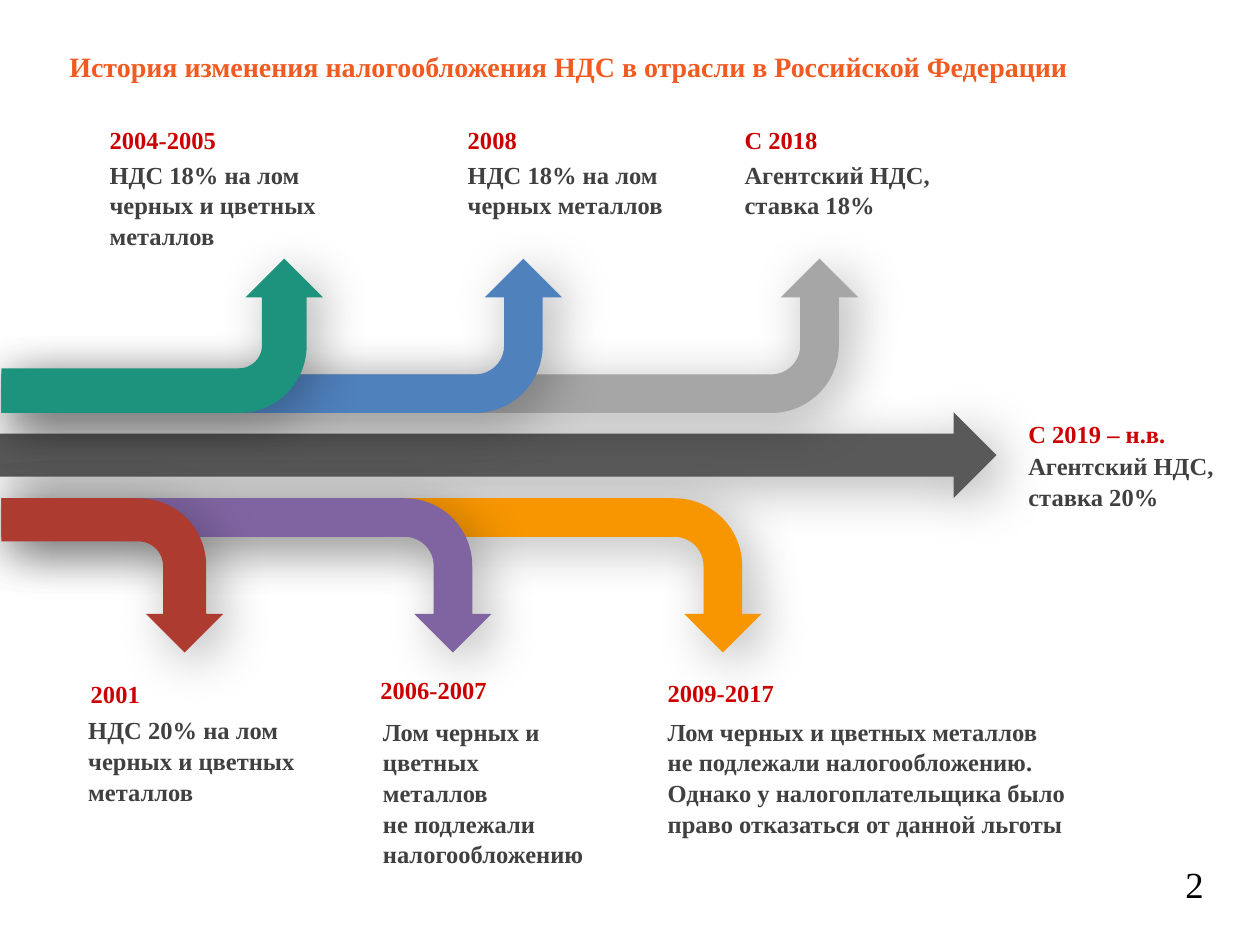
from lxml import etree
from pptx import Presentation
from pptx.dml.color import RGBColor
from pptx.enum import shapes, text
from pptx.oxml.ns import qn
from pptx.util import Cm, Pt

COLORS = {
    "title": "F15A21", "year": "CC0000", "body": "404040", "number": "000000",
    "axis": "595959", "gray": "A6A6A6", "orange": "F79600", "blue": "4F81BD",
    "green": "1D927D", "purple": "8064A2", "red": "AE3B2F",
}


class TimelineSlide:
    font_name = "Times New Roman"
    bend_depth = 3.11

    def __init__(self, slide):
        self.slide = slide

    def format(self, frame, size, color, bold=True, align=text.PP_ALIGN.LEFT, spacing=1.04):
        frame.margin_left = frame.margin_right = Cm(0.18)
        frame.margin_top = frame.margin_bottom = Cm(0.1)
        for paragraph in frame.paragraphs:
            paragraph.alignment = align
            paragraph.line_spacing = spacing
            font = paragraph.font
            font.name, font.size, font.bold = self.font_name, Pt(size), bold
            font.color.rgb = RGBColor.from_string(COLORS[color])

    def title(self, words, left, top, width, height):
        title = self.slide.shapes.title
        title.left, title.top, title.width, title.height = map(Cm, (left, top, width, height))
        title.text_frame.text = words
        title.text_frame.word_wrap = False
        title.text_frame.vertical_anchor = text.MSO_ANCHOR.MIDDLE
        self.format(title.text_frame, 16, "title", spacing=1.0)
        title.text_frame.margin_left = Cm(0.23)

    def label(self, words, left, top, width, height, size=14, color="body", **style):
        box = self.slide.shapes.add_textbox(Cm(left), Cm(top), Cm(width), Cm(height))
        frame = box.text_frame
        frame.word_wrap = True
        frame.auto_size = text.MSO_AUTO_SIZE.SHAPE_TO_FIT_TEXT
        frame.text = words
        self.format(frame, size, color, **style)

    def shadow(self, shape):
        effects = etree.SubElement(shape._element.spPr, qn("a:effectLst"))
        outer = etree.SubElement(effects, qn("a:outerShdw"), blurRad=str(Pt(30)),
                                 dist=str(Pt(8)), dir=str(45 * 60000), rotWithShape="0")
        black = etree.SubElement(outer, qn("a:srgbClr"), val="000000")
        etree.SubElement(black, qn("a:alpha"), val="30000")

    def arrow(self, kind, color, left, top, width, height):
        arrow = self.slide.shapes.add_shape(kind, Cm(left), Cm(top), Cm(width), Cm(height))
        arrow.fill.solid()
        arrow.fill.fore_color.rgb = RGBColor.from_string(COLORS[color])
        arrow.line.fill.background()
        self.shadow(arrow)
        return arrow

    def bent_arrow(self, color, length, upward, stem=None):
        """Arrow from the left edge that turns up or down at its far end."""
        depth = self.bend_depth
        middle = 6.77 if upward else 11.6
        arrow = self.arrow(shapes.MSO_SHAPE.BENT_ARROW, color, 0.03 + (length - depth) / 2,
                           middle - length / 2, depth, length)
        arrow.rotation = 90 if upward else 270
        frame = arrow._element.spPr.find(qn("a:xfrm"))
        frame.set("flipH", "1")
        if not upward:
            frame.set("flipV", "1")
        if stem:
            arrow.adjustments[0] = stem


# Arrows from back to front: colour, length, upward, stem width
BENDS = [
    ("gray", 17.27, True, None),
    ("orange", 15.32, False, None),
    ("blue", 11.3, True, None),
    ("green", 6.48, True, 0.29),
    ("purple", 9.88, False, None),
    ("red", 4.47, False, 0.28),
]

# Periods: years with left and top, then text with left, top, width and height
PERIODS = [
    ("С 2019 – н.в.", 20.55, 8.33, "Агентский НДС, ставка 20%", 20.55, 8.97, 4.55, 1.4),
    ("2001", 1.65, 13.56, "НДС 20% на лом черных и цветных металлов", 1.6, 14.3, 4.6, 1.98),
    ("2004-2005", 2.03, 2.39, "НДС 18% на лом черных и цветных металлов", 2.03, 3.1, 5.89, 1.98),
    ("2006-2007", 7.49, 13.49,
     "Лом черных и цветных металлов\nне подлежали налогообложению", 7.54, 14.33, 4.45, 2.59),
    ("2008", 9.25, 2.39, "НДС 18% на лом черных металлов", 9.25, 3.1, 4.55, 1.4),
    ("2009-2017", 13.28, 13.54,
     "Лом черных и цветных металлов\nне подлежали налогообложению. "
     "Однако у налогоплательщика было право отказаться от данной льготы",
     13.28, 14.33, 9.19, 2.59),
    ("С 2018", 14.83, 2.39, "Агентский НДС, ставка 18%", 14.83, 3.1, 4.55, 1.4),
]


def main():
    deck = Presentation()
    deck.slide_width, deck.slide_height = Cm(25.4), Cm(19.05)
    page = TimelineSlide(deck.slides.add_slide(deck.slide_layouts[5]))

    # Title and page number
    page.title("История изменения налогообложения НДС в отрасли в Российской Федерации",
               1.17, 0.33, 23.52, 2.01)
    page.label("2", 23.42, 17.27, 1.32, 1.09, 21, "number", bold=False,
               align=text.PP_ALIGN.CENTER, spacing=1.0)

    # Time axis and its branches
    page.arrow(shapes.MSO_SHAPE.RIGHT_ARROW, "axis", 0, 8.31, 20.09, 1.73)
    for bend in BENDS:
        page.bent_arrow(*bend)

    # Years and tax rules
    for years, left, top, rule, *place in PERIODS:
        page.label(years, left, top, 4, 0.79, color="year")
        page.label(rule, *place)

    deck.save("out.pptx")


if __name__ == "__main__":
    main()
